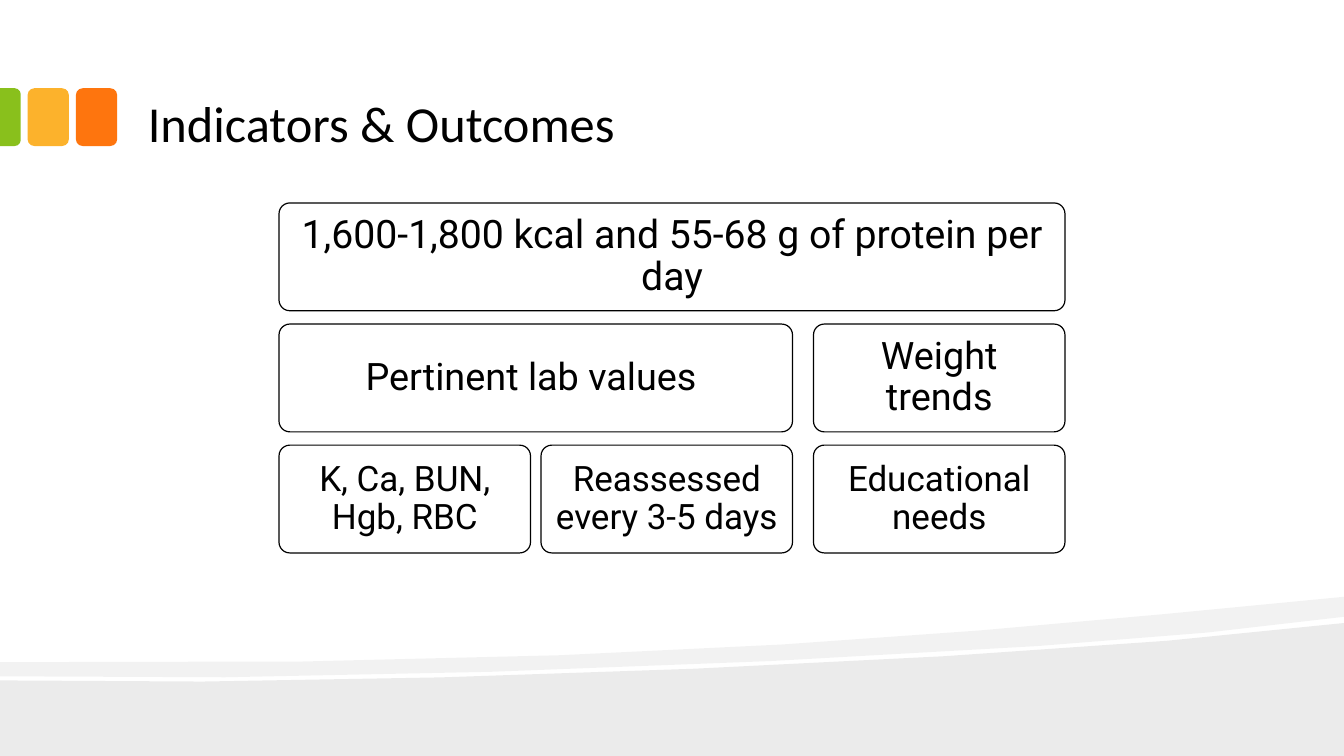
import pptx
import pptx.util
import pptx.oxml
import pptx.oxml.ns
from pptx.dml.color import RGBColor
from pptx.enum.shapes import MSO_SHAPE
from pptx.enum.text import MSO_ANCHOR, PP_ALIGN

Pt = pptx.util.Pt
WIDE, HIGH = 960, 540
INK = {"black": "000000", "white": "FFFFFF", "green": "89C01C",
       "amber": "FCB22C", "orange": "FE750E"}


def paint(shape, color, alpha=None):
    shape.shadow.inherit = False
    shape.fill.solid()
    shape.fill.fore_color.rgb = RGBColor.from_string(INK[color])
    shape.line.fill.background()
    if alpha:
        tag = shape.fill._xPr.find(".//" + pptx.oxml.ns.qn("a:srgbClr"))
        tag.append(pptx.oxml.parse_xml(
            f'<a:alpha {pptx.oxml.ns.nsdecls("a")} val="{alpha * 1000}"/>'))


def write(shape, text, size, font, inset, anchor, align):
    frame = shape.text_frame
    frame.word_wrap = True
    frame.vertical_anchor = anchor
    frame.margin_left = frame.margin_right = Pt(inset[0])
    frame.margin_top = frame.margin_bottom = Pt(inset[1])
    para = frame.paragraphs[0]
    para.alignment = align
    run = para.add_run()
    run.text = text
    run.font.size = Pt(size)
    run.font.name = font
    run.font.color.rgb = RGBColor.from_string(INK["black"])
    return para


def curve(steps, a, b, c, d):
    """Points along a cubic curve, after its start."""
    for i in range(1, steps + 1):
        t = i / steps
        u = 1 - t
        yield tuple(u**3 * p + 3 * u * u * t * q + 3 * u * t * t * r + t**3 * s
                    for p, q, r, s in zip(a, b, c, d))


def waves(slide, left, top):
    # Each wave is an outline in points, measured from the band's corner
    bend = (740.9, 111.5)
    lower = [(WIDE, 190), (0, 190), (0, 136),
             *curve(6, (0, 136), (253.4, 141.8), (750.2, 121.6), (WIDE, 95))]
    upper = [(WIDE, 90.6),
             *curve(2, (WIDE, 90.6), (903.6, 98.6), (827.3, 105.8), bend),
             *curve(4, bend, (502.6, 127.4), (185.8, 137.4), (0, 133.1)),
             (0, 123),
             *curve(6, (0, 123), (469.4, 126.6), (699.1, 101.4), (WIDE, 76.3))]
    for outline, alpha in ((lower, 8), (upper, 5)):
        spots = [(Pt(left + x), Pt(top + y)) for x, y in outline]
        pen = slide.shapes.build_freeform(*spots[0], scale=1.0)
        pen.add_line_segments(spots[1:], close=True)
        paint(pen.convert_to_shape(), "black", alpha)


def tabs(slide, left, top, high):
    # Two full tabs, then the one cut by the slide edge
    for x, color in ((54.2, "orange"), (19.7, "amber")):
        tab = slide.shapes.add_shape(MSO_SHAPE.ROUNDED_RECTANGLE, Pt(left + x),
                                     Pt(top), Pt(29.5), Pt(high))
        paint(tab, color)
    wide = 14.8
    tab = slide.shapes.add_shape(
        MSO_SHAPE.ROUND_2_SAME_RECTANGLE, Pt(left + (wide - high) / 2),
        Pt(top + (high - wide) / 2), Pt(high), Pt(wide))
    tab.rotation = 90
    tab.adjustments[0] = 0.29
    paint(tab, "green")


def title(slide, left, top, wide, high):
    box = slide.shapes.add_textbox(Pt(left), Pt(top), Pt(wide), Pt(high))
    write(box, "Indicators & Outcomes", 36, "Calibri", (9.6, 4.8),
          MSO_ANCHOR.BOTTOM, PP_ALIGN.LEFT)


def goals(slide, left, top, wide, high):
    # Three columns: a narrow gap in the left pair, a wide one beside it
    near, far, gap = 7.5, 15, 9.5
    cell = (wide - near - far) / 3
    tall = (high - 2 * gap) / 3
    pair = 2 * cell + near
    third = pair + far
    rows = [
        (28, 8.8, [(0, wide, "1,600-1,800 kcal and 55-68 g of protein per day")]),
        (27, 8.2, [(0, pair, "Pertinent lab values "),
                   (third, cell, "Weight trends")]),
        (25, 7.5, [(0, cell, "K, Ca, BUN, Hgb, RBC"),
                   (cell + near, cell, "Reassessed every 3-5 days "),
                   (third, cell, "Educational needs")]),
    ]
    for i, (size, inset, cells) in enumerate(rows):
        for x, span, text in cells:
            box = slide.shapes.add_shape(
                MSO_SHAPE.ROUNDED_RECTANGLE, Pt(left + x),
                Pt(top + i * (tall + gap)), Pt(span), Pt(tall))
            box.adjustments[0] = 0.1
            paint(box, "white")
            box.line.color.rgb = RGBColor.from_string(INK["black"])
            box.line.width = Pt(0.85)
            para = write(box, text, size, "Roboto", (inset, inset),
                         MSO_ANCHOR.MIDDLE, PP_ALIGN.CENTER)
            para.line_spacing = 0.9


def main():
    deck = pptx.Presentation()
    deck.slide_width, deck.slide_height = Pt(WIDE), Pt(HIGH)
    slide = deck.slides.add_slide(deck.slide_layouts[6])
    waves(slide, 0, 350)
    tabs(slide, 0, 63, 41.3)
    title(slide, 96, 11.7, 767.5, 102.2)
    goals(slide, 199.3, 145, 561.4, 250)
    deck.save("out.pptx")


if __name__ == "__main__":
    main()
